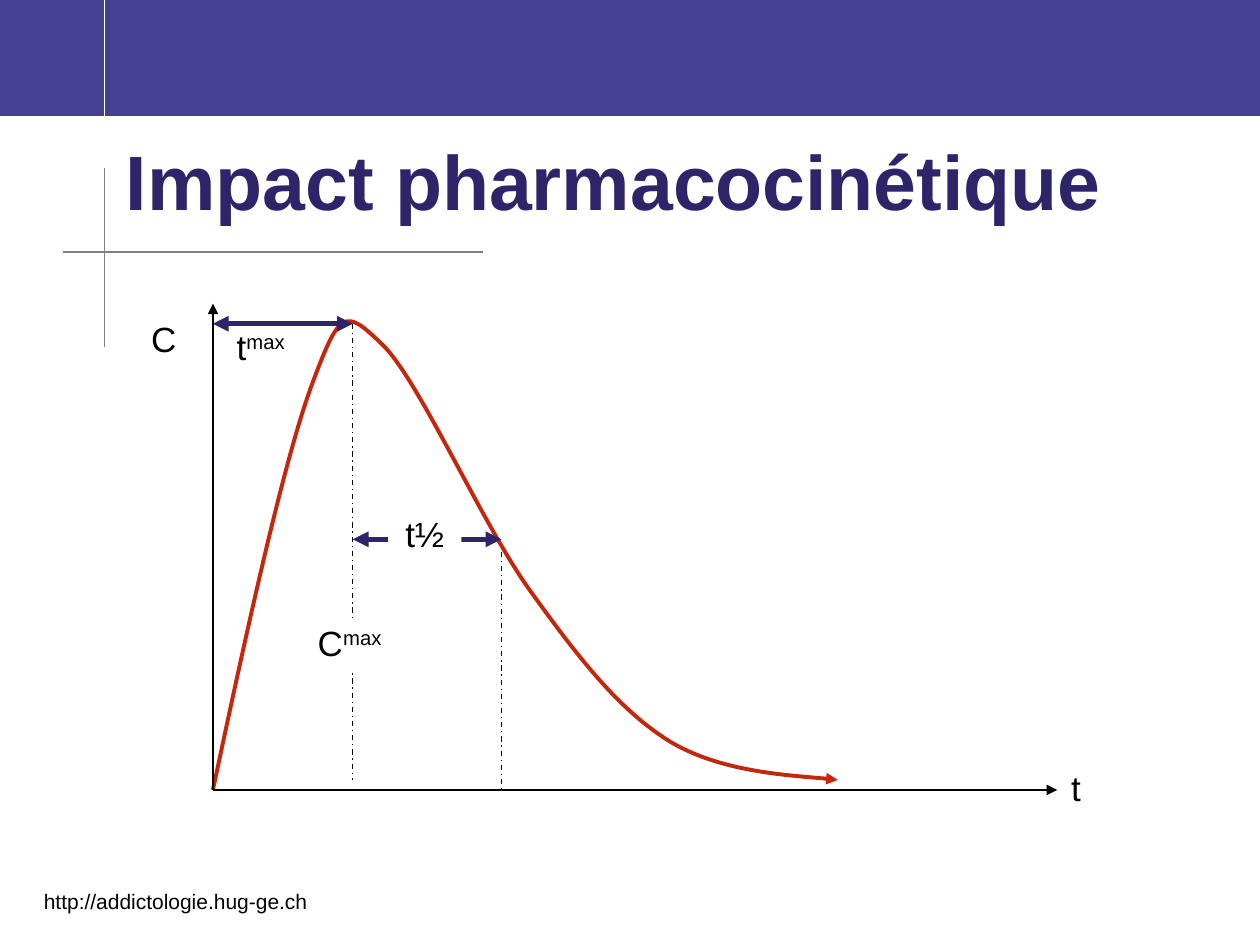
import pptx
import pptx.dml.color
import pptx.enum.dml
import pptx.enum.shapes
import pptx.enum.text
import pptx.oxml.ns
import pptx.oxml.xmlchemy
import pptx.util

Pt = pptx.util.Pt
qn = pptx.oxml.ns.qn
new_element = pptx.oxml.xmlchemy.OxmlElement
Align = pptx.enum.text.PP_ALIGN
Anchor = pptx.enum.text.MSO_ANCHOR
COLORS = {"band": "444092", "ink": "2E246A", "curve": "C5270D",
          "rule": "808080", "black": "000000", "white": "FFFFFF"}
TITLE = {"size": Pt(44), "bold": True}
FOOTER = {"size": Pt(12)}
LABEL = {"size": Pt(20)}


class SlideBuilder:
    """Draws styled elements on the current page, in points."""

    def __init__(self, page, font_name):
        self.page = page
        self.font_name = font_name

    def color(self, name):
        return pptx.dml.color.RGBColor.from_string(COLORS[name])

    def stroke(self, item, color, width, dash=None, ends=()):
        item.line.color.rgb = self.color(color)
        item.line.width = Pt(width)
        if dash:
            item.line.dash_style = dash
        outline = item._element.spPr.find(qn("a:ln"))
        for end in ends:
            arrowhead = new_element(end)
            arrowhead.set("type", "triangle")
            outline.append(arrowhead)

    def band(self, left, top, width, height, color):
        box = self.page.shapes.add_shape(
            pptx.enum.shapes.MSO_SHAPE.RECTANGLE, Pt(left), Pt(top), Pt(width), Pt(height))
        box.shadow.inherit = False
        box.fill.solid()
        box.fill.fore_color.rgb = self.color(color)
        box.line.fill.background()

    def line(self, x1, y1, x2, y2, color="black", width=0.75, dash=None, ends=()):
        connector = self.page.shapes.add_connector(
            pptx.enum.shapes.MSO_CONNECTOR.STRAIGHT, Pt(x1), Pt(y1), Pt(x2), Pt(y2))
        self.stroke(connector, color, width, dash, ends)
        connector._element.spPr.append(new_element("a:effectLst"))
        return connector

    def curve(self, points, color, width, ends):
        start, *rest = [(Pt(x), Pt(y)) for x, y in points]
        builder = self.page.shapes.build_freeform(*start)
        builder.add_line_segments(rest, close=False)
        shape = builder.convert_to_shape()
        shape.shadow.inherit = False
        shape.fill.background()
        self.stroke(shape, color, width, ends=ends)
        outline = next(shape._element.iter(qn("a:path")))
        segments = outline.findall(qn("a:lnTo"))
        for first in range(0, len(segments), 3):
            bezier = new_element("a:cubicBezTo")
            for segment in segments[first:first + 3]:
                bezier.append(segment[0])
                outline.remove(segment)
            outline.append(bezier)

    def text(self, left, top, width, height, words, style, color="black", raised="",
             fill=None, wrap=False, anchor=Anchor.TOP, align=Align.CENTER, spacing=0.9):
        box = self.page.shapes.add_textbox(Pt(left), Pt(top), Pt(width), Pt(height))
        if fill:
            box.fill.solid()
            box.fill.fore_color.rgb = self.color(fill)
        frame = box.text_frame
        frame.word_wrap = wrap
        frame.vertical_anchor = anchor
        para = frame.paragraphs[0]
        para.alignment = align
        para.line_spacing = spacing
        for part in filter(None, (words, raised)):
            span = para.add_run()
            span.text = part
            for name, value in {"name": self.font_name, **style}.items():
                setattr(span.font, name, value)
            span.font.color.rgb = self.color(color)
        if raised:
            span._r.get_or_add_rPr().set("baseline", "30000")
        return box


def main():
    deck = pptx.Presentation()
    deck.slide_width, deck.slide_height = Pt(720), Pt(540)
    draw = SlideBuilder(deck.slides.add_slide(deck.slide_layouts[6]), "Arial")
    origin_x, origin_y = 121.7, 451.4
    peak_x, peak_y = 201.6, 185
    half_x, half_y = 286.6, 308.2
    rule_x, label_height = 59.8, 28.8
    dash = pptx.enum.dml.MSO_LINE.DASH_DOT
    arrow, both = ("a:tailEnd",), ("a:headEnd", "a:tailEnd")

    draw.band(0, 0, 720, 66.2, "band")
    draw.line(rule_x, 66.2, rule_x, 0, "white")
    draw.text(18, 509, 563.8, 15.8, "http://addictologie.hug-ge.ch", FOOTER,
              wrap=True, align=Align.LEFT, spacing=0.6)
    draw.text(64.8, 71.3, 601.2, 62.6, "Impact pharmacocinétique", TITLE, "ink",
              wrap=True, anchor=Anchor.MIDDLE, align=Align.LEFT, spacing=1.0)
    draw.line(rule_x, 95.8, rule_x, 198, "rule")
    draw.line(36, 144, 275.8, 144, "rule")

    draw.curve([(origin_x, origin_y),
                (141.8, 356.4), (162.7, 261.4), (178.6, 218.9),
                (194.4, 176.4), (197.3, 176.4), (218.2, 196.6),
                (239, 216), (275.8, 300.2), (303.1, 337.7),
                (330.5, 375.8), (353.5, 405.4), (382.3, 423.4),
                (411.8, 441.4), (460.1, 443.5), (478.8, 445.7)], "curve", 2.25, arrow)

    draw.line(peak_x, peak_y, peak_x, 445.7, dash=dash)
    draw.text(172.8, 354.2, 54, label_height, "C", LABEL, raised="max", fill="white")
    draw.line(half_x, 315.4, half_x, origin_y, dash=dash)
    draw.line(peak_x, half_y, half_x, half_y, "ink", 3, ends=both)
    draw.text(221.8, 292.3, 41.8, label_height, "t½", LABEL, fill="white")
    draw.line(origin_x, peak_y, peak_x, peak_y, "ink", 3, ends=both)
    draw.text(125.3, peak_y, 47.5, label_height, "t", LABEL, raised="max", wrap=True)

    time_axis = draw.line(origin_x, origin_y, 604.1, origin_y, ends=arrow)
    time_label = draw.text(604.1, origin_y - label_height / 2, 21.6, label_height, "t", LABEL)
    time_axis.end_connect(time_label, 1)
    draw.line(origin_x, origin_y, origin_x, 173.5, ends=arrow)
    draw.text(79.2, 180.7, 28.8, label_height, "C", LABEL)
    deck.save("out.pptx")


if __name__ == "__main__":
    main()
